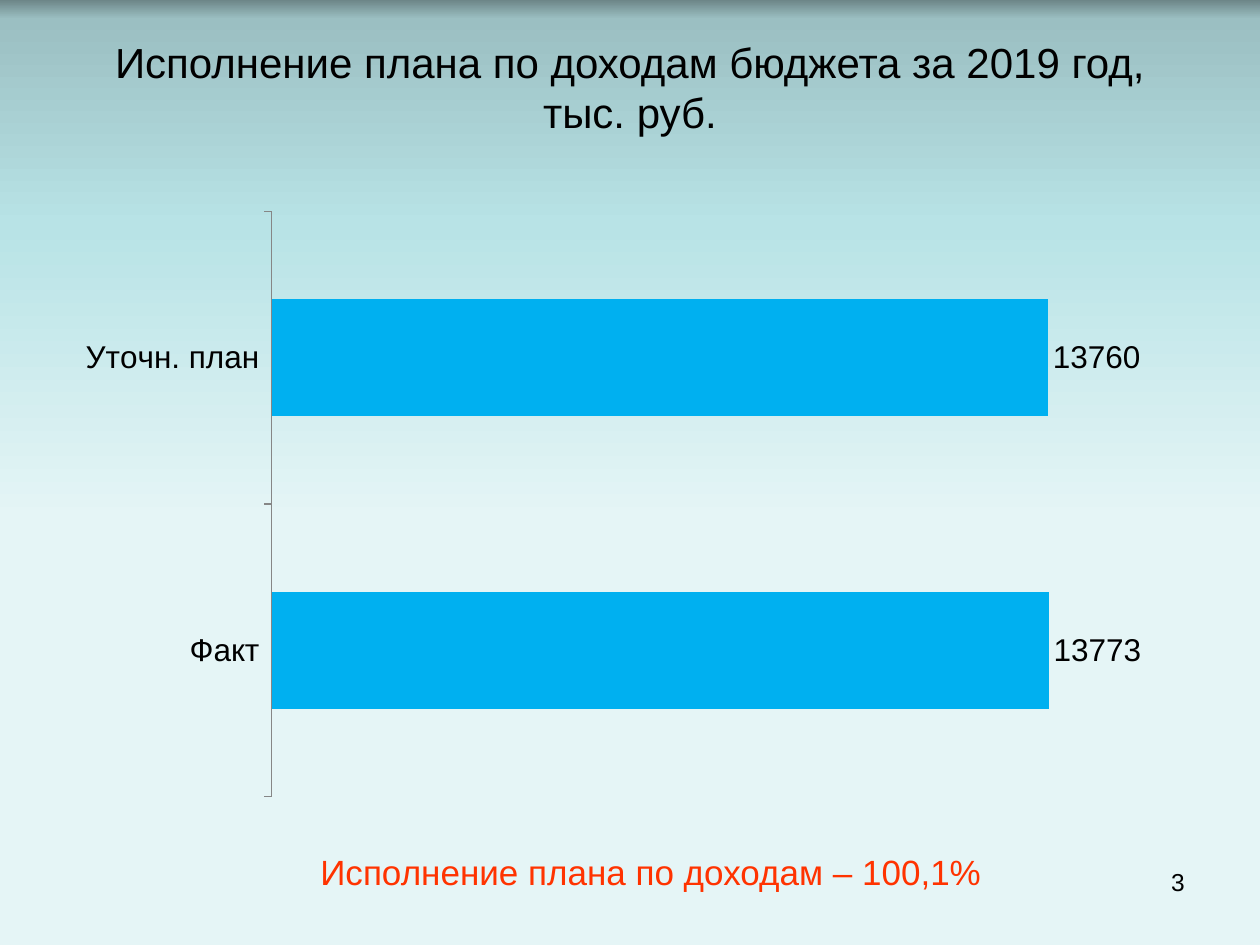
from lxml import etree
from pptx import Presentation
from pptx.chart.data import CategoryChartData
from pptx.dml.color import RGBColor
from pptx.enum.chart import XL_CHART_TYPE as ChartType, XL_LABEL_POSITION as LabelPos
from pptx.enum.chart import XL_TICK_MARK as TickMark
from pptx.enum.text import MSO_ANCHOR as Anchor, PP_ALIGN as Align
from pptx.oxml.ns import qn
from pptx.util import Pt

COLORS = {"text": "000000", "bar": "00B0F0", "axis": "868686", "result": "FF3300"}
BACKGROUND = [(0, "6D8688"), (2, "9BBFC2"), (24, "B8E3E6"), (55, "E5F5F6")]


def style_font(font, size, color="text"):
    font.name = "Arial"
    font.size = Pt(size)
    font.bold = False
    font.color.rgb = RGBColor.from_string(COLORS[color])


def set_text(shape, text, size, align, anchor, color="text"):
    frame = shape.text_frame
    frame.text = text
    frame.word_wrap = True
    frame.vertical_anchor = anchor
    paragraph = frame.paragraphs[0]
    paragraph.alignment = align
    for run in paragraph.runs:
        style_font(run.font, size, color)


deck = Presentation()
deck.slide_width, deck.slide_height = Pt(720), Pt(540)
slide = deck.slides.add_slide(deck.slide_layouts[5])

# Background gradient, top to bottom
fill = slide.background.fill
fill.gradient()
fill.gradient_angle = 270
stops = next(slide.background._cSld.iter(qn("a:gsLst")))
for stop in list(stops):
    stops.remove(stop)
for percent, color in BACKGROUND:
    stop = etree.SubElement(stops, qn("a:gs"), pos=str(percent * 1000))
    etree.SubElement(stop, qn("a:srgbClr"), val=color)

# Title
title = slide.shapes.title
title.left, title.top, title.width, title.height = Pt(36), Pt(21.6), Pt(648), Pt(56)
set_text(title, "Исполнение плана по доходам бюджета за 2019 год,\vтыс. руб.",
         24, Align.CENTER, Anchor.MIDDLE)

# Plan and actual income
income = CategoryChartData()
income.categories = ["Факт", "Уточн. план"]
income.add_series("Series 1", [13773, 13760])
chart = slide.shapes.add_chart(ChartType.BAR_CLUSTERED, Pt(36), Pt(114),
                               Pt(648), Pt(348), income).chart
chart.has_legend = False
chart.has_title = False
style_font(chart.font, 18)

plot = chart.plots[0]
plot.gap_width = 150
plot.vary_by_categories = False
bars = plot.series[0]
bars.format.fill.solid()
bars.format.fill.fore_color.rgb = RGBColor.from_string(COLORS["bar"])
labels = bars.data_labels
labels.show_value = True
labels.position = LabelPos.OUTSIDE_END
style_font(labels.font, 18)

categories = chart.category_axis
categories.major_tick_mark = TickMark.OUTSIDE
categories.format.line.color.rgb = RGBColor.from_string(COLORS["axis"])
categories.format.line.width = Pt(0.75)
values = chart.value_axis
values.minimum_scale = 0
values.has_major_gridlines = False
values.visible = False

# Slide number
number = slide.shapes.add_textbox(Pt(516), Pt(492), Pt(168), Pt(37.5))
set_text(number, "3", 14, Align.RIGHT, Anchor.TOP)

# Result
result = slide.shapes.add_textbox(Pt(156), Pt(486), Pt(432), Pt(24))
set_text(result, "Исполнение плана по доходам – 100,1%", 20,
         Align.CENTER, Anchor.MIDDLE, "result")

deck.save("out.pptx")
